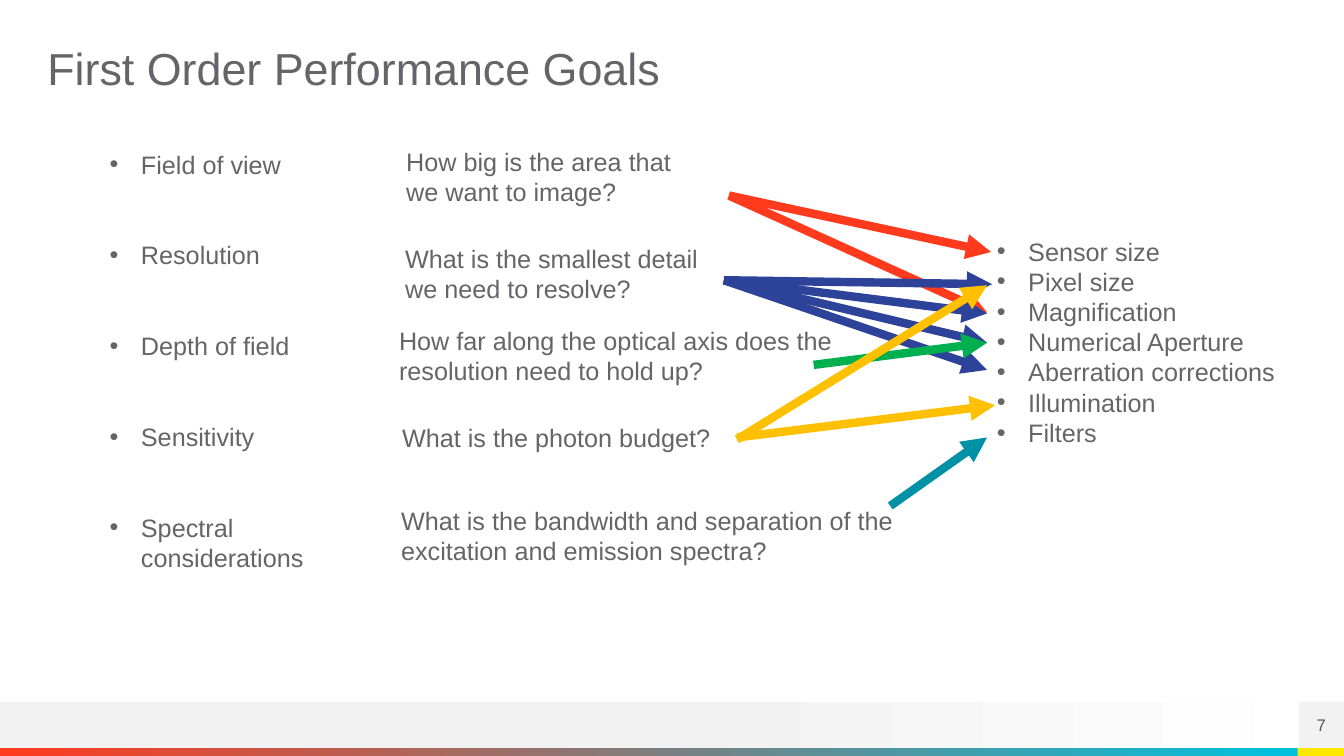
from lxml.etree import SubElement
from pptx import Presentation
from pptx.dml.color import RGBColor
from pptx.enum.shapes import MSO_CONNECTOR, MSO_SHAPE
from pptx.enum.text import MSO_ANCHOR, PP_ALIGN
from pptx.oxml.ns import qn
from pptx.util import Inches, Pt

COLORS = {
    "text": "656569", "number": "595959", "band": "F2F2F2", "white": "FFFFFF",
    "red": "FF3A1D", "cyan": "00C1DE", "yellow": "FFE800", "navy": "2D4399",
    "green": "00B050", "amber": "FFC000", "teal": "0091A6",
}
BODY = {"name": "Arial", "size": Pt(18)}
TITLE = {"name": "Arial", "size": Pt(32)}
NUMBER = {"name": "Arial", "size": Pt(12)}
NO_MARGINS = {"margin_left": 0, "margin_right": 0, "margin_top": 0,
              "margin_bottom": 0, "vertical_anchor": MSO_ANCHOR.MIDDLE}

GOALS = ["Field of view", "Resolution", "Depth of field", "Sensitivity",
         "Spectral considerations"]
PARAMETERS = ["Sensor size", "Pixel size", "Magnification", "Numerical Aperture",
              "Aberration corrections", "Illumination", "Filters"]
QUESTIONS = [
    ("How big is the area that we want to image?", (3.93, 1.4, 2.95, 0.71)),
    ("What is the smallest detail we need to resolve?", (3.92, 2.36, 3.28, 0.71)),
    ("How far along the optical axis does the resolution need to hold up?",
     (3.86, 3.18, 5.57, 0.71)),
    ("What is the photon budget?", (3.89, 4.14, 5.57, 0.4)),
    ("What is the bandwidth and separation of the excitation and emission spectra?",
     (3.88, 4.96, 5.57, 0.71)),
]
ARROWS = [
    ("red", (7.23, 1.94), [(9.83, 2.5), (9.79, 3.1)]),
    ("amber", (7.31, 4.34), [(9.87, 4.02)]),
    ("teal", (8.83, 5.02), [(9.79, 4.34)]),
    ("navy", (7.18, 2.78), [(9.84, 2.82), (9.79, 3.11), (9.79, 3.4), (9.79, 3.67)]),
    ("green", (8.07, 3.62), [(9.79, 3.4)]),
    ("amber", (7.31, 4.36), [(9.79, 2.83)]),
]


def rgb(color):
    return RGBColor.from_string(COLORS[color])


def apply_format(target, values):
    for attribute, value in values.items():
        setattr(target, attribute, value)


def add_bullet(paragraph):
    properties = paragraph._p.get_or_add_pPr()
    properties.set("marL", str(Inches(0.31)))
    properties.set("indent", str(Inches(-0.31)))
    SubElement(properties, qn("a:buFont"), typeface="Arial")
    SubElement(properties, qn("a:buChar"), char="•")


def write_lines(frame, lines, font, color="text", bullets=False, layout=None):
    for index, line in enumerate(lines):
        paragraph = frame.add_paragraph() if index else frame.paragraphs[0]
        if bullets:
            add_bullet(paragraph)
        apply_format(paragraph, layout or {})
        if index == 0:
            paragraph.space_before = Pt(0)
        paragraph.text = line
        apply_format(paragraph.font, font)
        paragraph.font.color.rgb = rgb(color)


def add_text(slide, box, lines, font=BODY, frame_format=None, **options):
    frame = slide.shapes.add_textbox(*map(Inches, box)).text_frame
    apply_format(frame, {"word_wrap": True, **(frame_format or {})})
    write_lines(frame, lines, font, **options)


def add_bar(slide, box, color, end_color=None, start=0):
    bar = slide.shapes.add_shape(MSO_SHAPE.RECTANGLE, *map(Inches, box))
    bar.shadow.inherit = False
    bar.line.fill.background()
    if end_color:
        bar.fill.gradient()
        bar.fill.gradient_angle = 0
        stops = zip(bar.fill.gradient_stops, (color, end_color), (start, 1))
        for stop, stop_color, position in stops:
            stop.color.rgb = rgb(stop_color)
            stop.position = position
    else:
        bar.fill.solid()
        bar.fill.fore_color.rgb = rgb(color)
    return bar


def add_arrow(slide, start, end, color):
    arrow = slide.shapes.add_connector(
        MSO_CONNECTOR.STRAIGHT, *map(Inches, start + end))
    arrow.line.color.rgb = rgb(color)
    arrow.line.width = Pt(6)
    SubElement(arrow.line._get_or_add_ln(), qn("a:tailEnd"), type="triangle")
    SubElement(arrow._element.spPr, qn("a:effectLst"))


def add_footer(slide):
    add_bar(slide, (0, 6.96, 13.33, 0.46), "band", "white", 0.53)
    add_bar(slide, (0, 7.42, 12.87, 0.08), "red", "cyan")
    add_bar(slide, (12.87, 7.42, 0.46, 0.08), "yellow")
    page = add_bar(slide, (12.88, 6.96, 0.45, 0.46), "band").text_frame
    apply_format(page, NO_MARGINS)
    write_lines(page, ["7"], NUMBER, "number", layout={"alignment": PP_ALIGN.CENTER})


def main():
    presentation = Presentation()
    presentation.slide_width = Inches(13.33)
    presentation.slide_height = Inches(7.5)
    slide = presentation.slides.add_slide(presentation.slide_layouts[6])
    add_footer(slide)
    add_text(slide, (0.47, 0.47, 12.4, 0.47), ["First Order Performance Goals"],
             TITLE, NO_MARGINS, layout={"line_spacing": 0.9})
    add_text(slide, (0.99, 1.43, 2.36, 4.64), GOALS, bullets=True,
             layout={"space_before": Pt(43.2)})
    add_text(slide, (9.79, 2.29, 3.2, 2.22), PARAMETERS, bullets=True)
    for question, box in QUESTIONS:
        add_text(slide, box, [question])
    for color, start, ends in ARROWS:
        for end in ends:
            add_arrow(slide, start, end, color)
    presentation.save("out.pptx")


if __name__ == "__main__":
    main()
